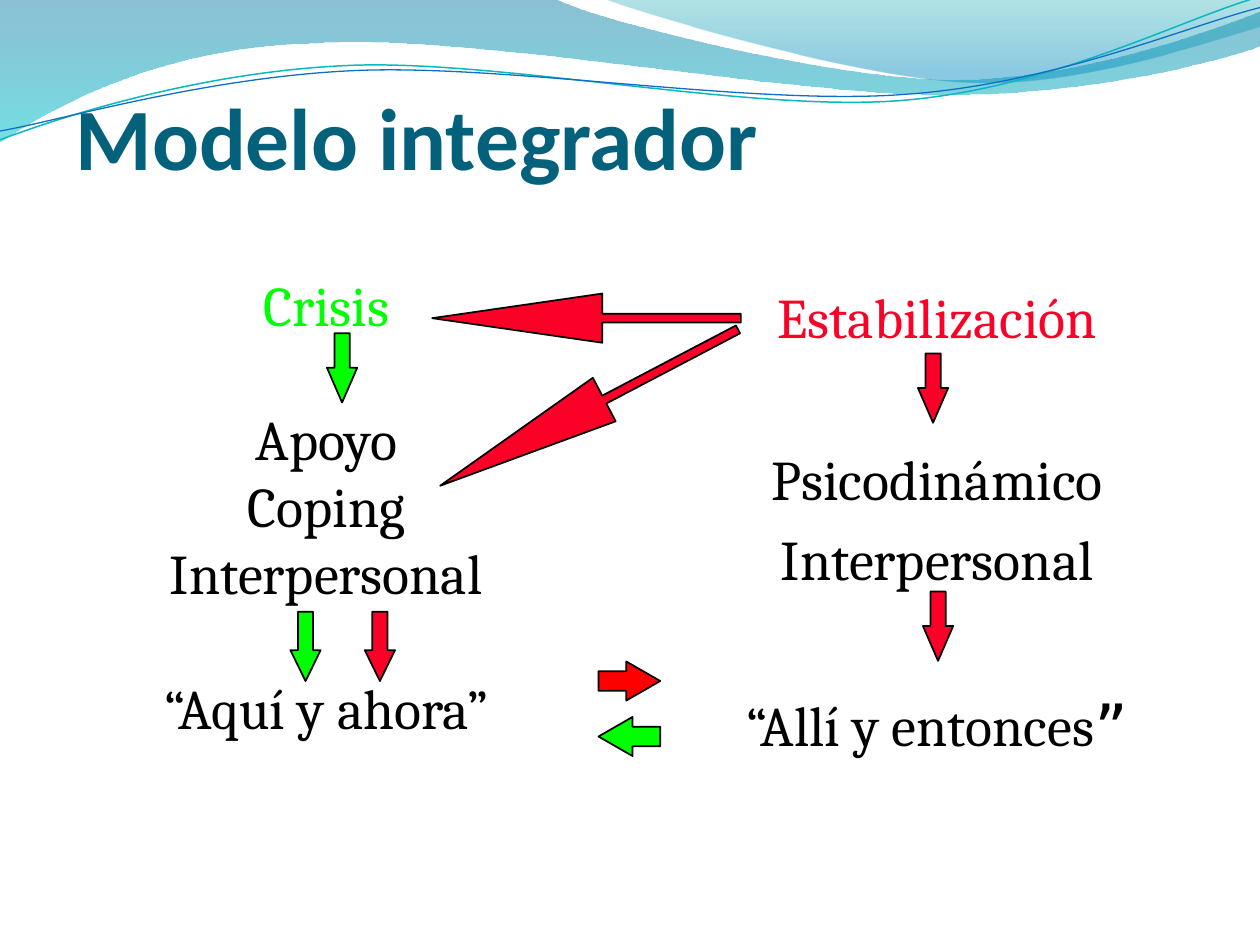
"""Build the "Modelo integrador" slide."""
from lxml import etree
from pptx import Presentation
from pptx.dml.color import RGBColor
from pptx.enum.shapes import MSO_SHAPE
from pptx.enum.text import MSO_ANCHOR, PP_ALIGN
from pptx.oxml.ns import qn
from pptx.util import Inches, Pt

ARROW = MSO_SHAPE.RIGHT_ARROW
CENTER, ALIGN_LEFT, BOTTOM = PP_ALIGN.CENTER, PP_ALIGN.LEFT, MSO_ANCHOR.BOTTOM

BLACK = RGBColor(0x00, 0x00, 0x00)
GREEN = RGBColor(0x00, 0xFF, 0x00)
CRIMSON = RGBColor(0xFC, 0x01, 0x28)
RED = RGBColor(0xFF, 0x00, 0x00)
TITLE_BLUE = RGBColor(0x04, 0x61, 0x7B)
DEEP_BLUE = RGBColor(0x00, 0x74, 0xA1)
AQUA = RGBColor(0x00, 0xC6, 0xCF)
TEAL = RGBColor(0x00, 0xA1, 0xA9)
SKY = RGBColor(0x00, 0x8B, 0xBF)
LINE_TEAL = RGBColor(0x0A, 0xB8, 0xBF)
LINE_BLUE = RGBColor(0x0F, 0x6F, 0xC6)

BANDS = [
    ([(0, 0), (4.4, -0.01),
      (4.76, 0.17, 6.64, 0.63, 7.58, 0.63), (8.53, 0.63, 9.58, 0.26, 10, 0.09),
      (10.01, 0.36),
      (9.83, 0.44, 8.7, 0.76, 7.46, 0.75), (6.22, 0.75, 3.82, 0.28, 2.57, 0.34),
      (1.29, 0.36, 0.46, 0.83, -0.01, 1.13), (0, 0)],
     [(0, DEEP_BLUE, 45), (1, AQUA, 55)]),
    ([(4.79, -0.01),
      (5.09, 0.11, 6.82, 0.62, 7.69, 0.65), (8.56, 0.69, 9.61, 0.32, 10, 0.21),
      (10, 0), (4.79, -0.01)],
     [(0, TEAL, 30), (0.8, SKY, 45)]),
]
WAVES = [
    ([(0, 1.11), (0.48, 0.93, 1.58, 0.57, 2.77, 0.52),
      (3.95, 0.47, 5.93, 0.89, 7.13, 0.8), (8.33, 0.71, 9.38, 0.15, 9.98, -0.02)],
     LINE_TEAL, 0.85),
    ([(0, 1.04), (0.47, 0.96, 1.64, 0.61, 2.83, 0.56),
      (4.03, 0.51, 5.97, 0.84, 7.17, 0.75), (8.36, 0.67, 9.41, 0.21, 10, 0.06)],
     LINE_BLUE, 0.75),
]
DOWN_ARROWS = [
    (7.13, 2.96, 1.15, CRIMSON),
    (7.17, 4.85, 1.15, CRIMSON),
    (2.44, 2.8, 1.15, GREEN),
    (2.15, 5.01, 1.02, GREEN),
    (2.74, 5.01, 1.02, CRIMSON),
]


class SlideBuilder:
    """Hold the text style and the current slide."""

    font = {"name": "Cambria", "size": Pt(32)}
    title_font = {"name": "Calibri", "size": Pt(50), "bold": True}

    def __init__(self, slide):
        """Keep the slide to draw on."""
        self.slide = slide
        self.shapes = slide.shapes

    def style(self, font, color, values):
        """Apply a dict of format values and a colour to a font."""
        for name, value in values.items():
            setattr(font, name, value)
        font.color.rgb = color

    def title(self, text, left, top, width, height):
        """Fill, move and format the title placeholder, in front of the waves."""
        sp = self.shapes.title
        box = {"left": left, "top": top, "width": width, "height": height}
        for name, value in box.items():
            setattr(sp, name, Inches(value))
        tf = sp.text_frame
        tf.vertical_anchor = BOTTOM
        p = tf.paragraphs[0]
        p.alignment = ALIGN_LEFT
        r = p.add_run()
        r.text = text
        self.style(r.font, TITLE_BLUE, self.title_font)
        sp._element.getparent().append(sp._element)

    def outline(self, segments, close):
        """Draw a freeform of lines and cubic curves."""
        points = [(Inches(seg[i]), Inches(seg[i + 1]))
                  for seg in segments for i in range(0, len(seg), 2)]
        builder = self.shapes.build_freeform(*points[0])
        builder.add_line_segments(points[1:], close=close)
        sp = builder.convert_to_shape()
        sp.shadow.inherit = False
        lines = iter(list(sp._element.spPr.iter(qn("a:lnTo"))))
        for seg in segments[1:]:
            line = next(lines)
            if len(seg) == 6:
                curve = etree.Element(qn("a:cubicBezTo"))
                line.addprevious(curve)
                for part in (line, next(lines), next(lines)):
                    curve.append(part[0])
                    part.getparent().remove(part)
        return sp

    def band(self, segments, stops):
        """Draw a closed band with a translucent vertical gradient."""
        sp = self.outline(segments, True)
        sp.line.fill.background()
        sp.fill.gradient()
        sp.fill.gradient_angle = 270
        for stop, (position, color, _) in zip(sp.fill.gradient_stops, stops):
            stop.position = position
            stop.color.rgb = color
        for clr, (_, _, alpha) in zip(sp._element.spPr.iter(qn("a:srgbClr")), stops):
            etree.SubElement(clr, qn("a:alpha")).set("val", str(alpha * 1000))

    def wave(self, segments, color, width):
        """Draw an open curved line."""
        sp = self.outline(segments, False)
        sp.fill.background()
        sp.line.color.rgb = color
        sp.line.width = Pt(width)

    def arrow(self, left, top, width, height, adj, color, rotation=0):
        """Draw a filled block arrow with a black outline."""
        sp = self.shapes.add_shape(ARROW, *map(Inches, (left, top, width, height)))
        sp.shadow.inherit = False
        sp.rotation = rotation
        for i, value in enumerate(adj):
            sp.adjustments[i] = value
        sp.fill.solid()
        sp.fill.fore_color.rgb = color
        sp.line.color.rgb = BLACK
        sp.line.width = Pt(1)

    def column(self, left, top, width, height, lines):
        """Write centred lines, each as (runs, colour, spacing, gap before)."""
        sp = self.shapes.add_textbox(*map(Inches, (left, top, width, height)))
        tf = sp.text_frame
        tf.word_wrap = False
        for i, (runs, color, spacing, gap) in enumerate(lines):
            p = tf.add_paragraph() if i else tf.paragraphs[0]
            p.alignment = CENTER
            p.line_spacing = spacing
            p.space_before = Pt(gap)
            for text, values in runs:
                r = p.add_run()
                r.text = text
                self.style(r.font, color, {**self.font, **values})


def main():
    """Build and save the slide."""
    prs = Presentation()
    prs.slide_width, prs.slide_height = Inches(10), Inches(7.5)
    s = SlideBuilder(prs.slides.add_slide(prs.slide_layouts[5]))
    for band in BANDS:
        s.band(*band)
    for wave in WAVES:
        s.wave(*wave)
    s.title("Modelo integrador", 0.5, 0.29, 9, 1.25)
    for left, top, head, color in DOWN_ARROWS:
        s.arrow(left, top, 0.55, 0.24, (0.5, head), color, 90)
    s.column(5.75, 2.09, 3.38, 3.96, [
        ([("Estabilización", {})], CRIMSON, 1.2, 0),
        ([("Psicodinámico", {})], BLACK, 1.2, 46),
        ([("Interpersonal", {})], BLACK, 1.2, 0),
        ([("“Allí y entonces", {}), ("”", {"name": "DejaVu Sans Mono"})],
         BLACK, 1.25, 46.5),
    ])
    s.arrow(3.43, 2.33, 2.45, 0.39, (0.18, 3.46), CRIMSON, 180)
    s.column(1.14, 2.1, 2.9, 3.87, [
        ([("Crisis", {})], GREEN, 1, 0),
        ([("Apoyo", {})], BLACK, 1, 38),
        ([("Coping", {})], BLACK, 1, 0),
        ([("Interpersonal", {})], BLACK, 1, 0),
        ([("“Aquí y ahora”", {})], BLACK, 1, 38.5),
    ])
    s.arrow(4.75, 5.25, 0.49, 0.31, (0.5, 0.87), RED)
    s.arrow(4.75, 5.69, 0.49, 0.31, (0.5, 0.87), GREEN, 180)
    s.arrow(3.34, 3.04, 2.67, 0.39, (0.18, 3.77), CRIMSON, 152.3)
    prs.save("out.pptx")


if __name__ == "__main__":
    main()
